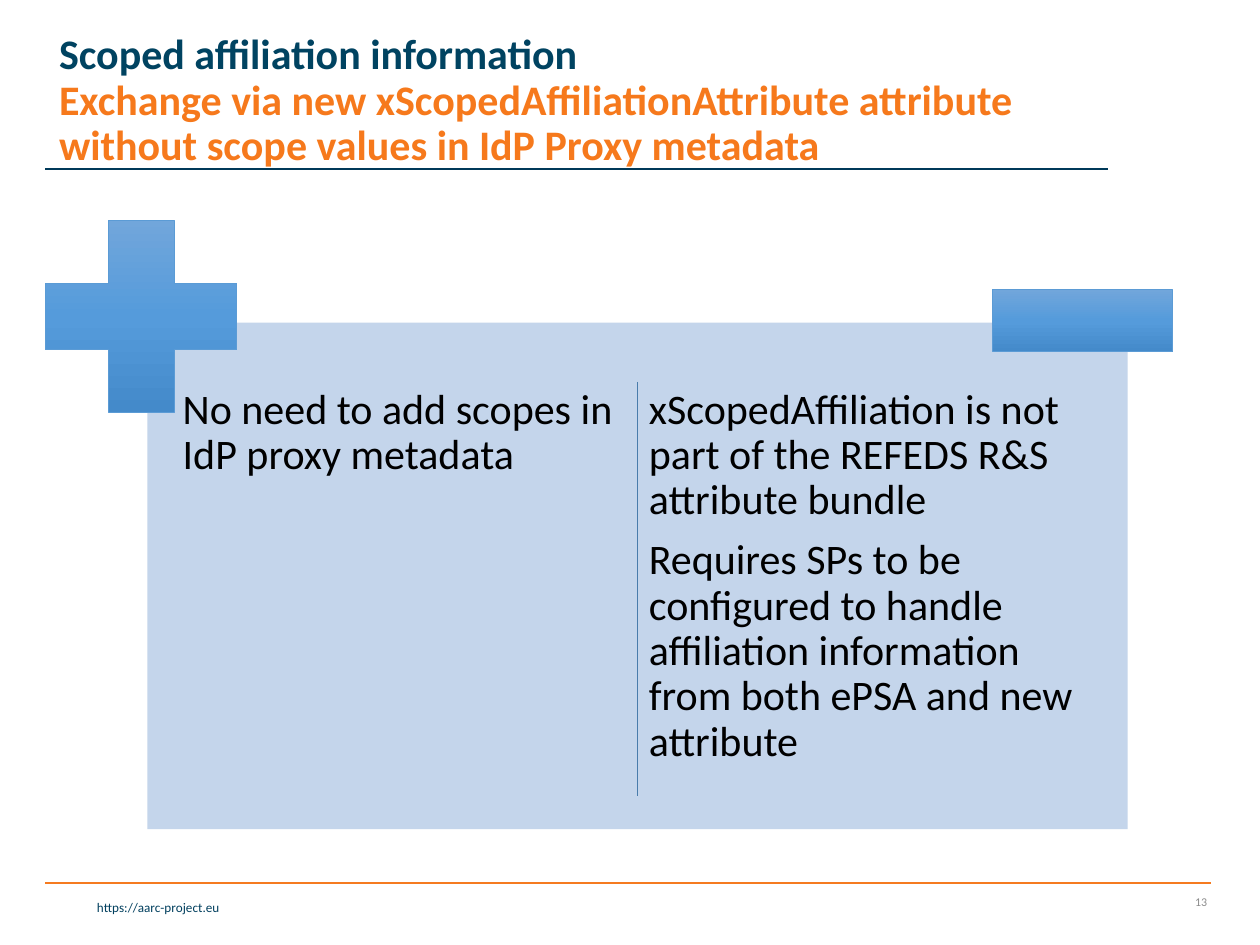
import copy
from dataclasses import dataclass

import pptx
import pptx.dml.color
import pptx.enum.shapes
import pptx.enum.text
import pptx.oxml.ns
import pptx.util
from lxml import etree

Inches = pptx.util.Inches
Pt = pptx.util.Pt
Align = pptx.enum.text.PP_ALIGN
Anchor = pptx.enum.text.MSO_ANCHOR
Shape = pptx.enum.shapes.MSO_SHAPE


@dataclass
class Theme:
    font: str = "Calibri"
    title: str = "004361"
    accent: str = "F6791C"
    ruler: str = "003959"
    foot_rule: str = "F57B20"
    link: str = "003F5E"
    number: str = "8C8C8C"
    body: str = "000000"
    panel: str = "C4D5EB"
    edge: str = "5B9BD5"
    split: str = "497CAB"
    blend: tuple = ("71A6DB", "559BDB", "448ACA")
    large: float = 24
    small: float = 7.5
    tiny: float = 6.8


def rgb(code):
    return pptx.dml.color.RGBColor.from_string(code)


def write(para, text, *, font, size, color, bold=False, align=Align.LEFT,
          line=1.0, after=0):
    para.alignment = align
    para.line_spacing = line
    para.space_after = Pt(after)
    run = para.add_run()
    run.text = text
    run.font.name = font
    run.font.size = Pt(size)
    run.font.bold = bold
    run.font.color.rgb = rgb(color)


class Deck:
    def __init__(self, theme):
        self.theme = theme
        self.file = pptx.Presentation()
        self.file.slide_width = Inches(10)
        self.file.slide_height = Inches(7.5)
        self.slide = self.file.slides.add_slide(self.file.slide_layouts[6])

    def text(self, box, paras, *, inset=(0.1, 0.05), anchor=Anchor.TOP, **form):
        frame = self.slide.shapes.add_textbox(*map(Inches, box)).text_frame
        frame.word_wrap = True
        frame.vertical_anchor = anchor
        frame.margin_left = frame.margin_right = Inches(inset[0])
        frame.margin_top = frame.margin_bottom = Inches(inset[1])
        for order, text in enumerate(paras):
            para = frame.add_paragraph() if order else frame.paragraphs[0]
            write(para, text, font=self.theme.font, **form)
        return frame

    def title(self, box, head, sub):
        form = dict(size=self.theme.large, bold=True, line=0.9)
        frame = self.text(box, [head], anchor=Anchor.MIDDLE,
                          color=self.theme.title, **form)
        para = frame.paragraphs[0]
        para.add_line_break()
        write(para, sub, font=self.theme.font, color=self.theme.accent, **form)

    def panel(self, box):
        shape = self.slide.shapes.add_shape(Shape.RECTANGLE, *map(Inches, box))
        shape.shadow.inherit = False
        shape.fill.solid()
        shape.fill.fore_color.rgb = rgb(self.theme.panel)
        shape.line.fill.background()

    def sign(self, kind, box, arm=None):
        shape = self.slide.shapes.add_shape(kind, *map(Inches, box))
        shape.shadow.inherit = False
        if arm is not None:
            shape.adjustments[0] = arm
        shape.fill.gradient()
        shape.fill.gradient_angle = 270
        stops = shape._element.spPr.find(".//" + pptx.oxml.ns.qn("a:gsLst"))
        stops.insert(1, copy.deepcopy(stops[0]))
        for stop, color, place in zip(shape.fill.gradient_stops,
                                      self.theme.blend, (0, 0.5, 1)):
            stop.color.rgb = rgb(color)
            stop.position = place
        shape.line.color.rgb = rgb(self.theme.edge)
        shape.line.width = Pt(0.5)

    def rule(self, start, end, color, width):
        line = self.slide.shapes.add_connector(
            pptx.enum.shapes.MSO_CONNECTOR.STRAIGHT,
            *map(Inches, start + end))
        line.line.color.rgb = rgb(color)
        line.line.width = Pt(width)
        etree.SubElement(line._element.spPr, pptx.oxml.ns.qn("a:effectLst"))


def main():
    theme = Theme()
    deck = Deck(theme)

    deck.rule((0.36, 7.01), (9.61, 7.01), theme.foot_rule, 1)
    deck.text((0.35, 7.09, 1.49, 0.23), ["https://aarc-project.eu"],
              size=theme.small, color=theme.link, align=Align.RIGHT)
    deck.rule((0.36, 1.34), (8.79, 1.34), theme.ruler, 1)
    deck.text((9.07, 7.01, 0.61, 0.3), ["13"], anchor=Anchor.MIDDLE,
              size=theme.tiny, color=theme.number, align=Align.RIGHT)
    deck.title((0.37, 0.08, 7.88, 1.45), "Scoped affiliation information",
               "Exchange via new xScopedAffiliationAttribute attribute "
               "without scope values in IdP Proxy metadata")

    deck.panel((1.17, 2.56, 7.78, 4.02))
    pros = ["No need to add scopes in IdP proxy metadata"]
    cons = ["xScopedAffiliation is not part of the REFEDS R&S attribute bundle",
            "Requires SPs to be configured to handle affiliation information "
            "from both ePSA and new attribute"]
    for left, points in ((1.4, pros), (5.1, cons)):
        deck.text((left, 3.03, 3.61, 3.44), points, inset=(0.05, 0.05),
                  size=theme.large, color=theme.body, line=0.9,
                  after=0.35 * theme.large)
    deck.sign(Shape.CROSS, (0.36, 1.75, 1.52, 1.52), arm=0.328)
    deck.sign(Shape.RECTANGLE, (7.88, 2.3, 1.43, 0.49))
    deck.rule((5.06, 3.03), (5.06, 6.32), theme.split, 0.5)

    deck.file.save("out.pptx")


if __name__ == "__main__":
    main()
